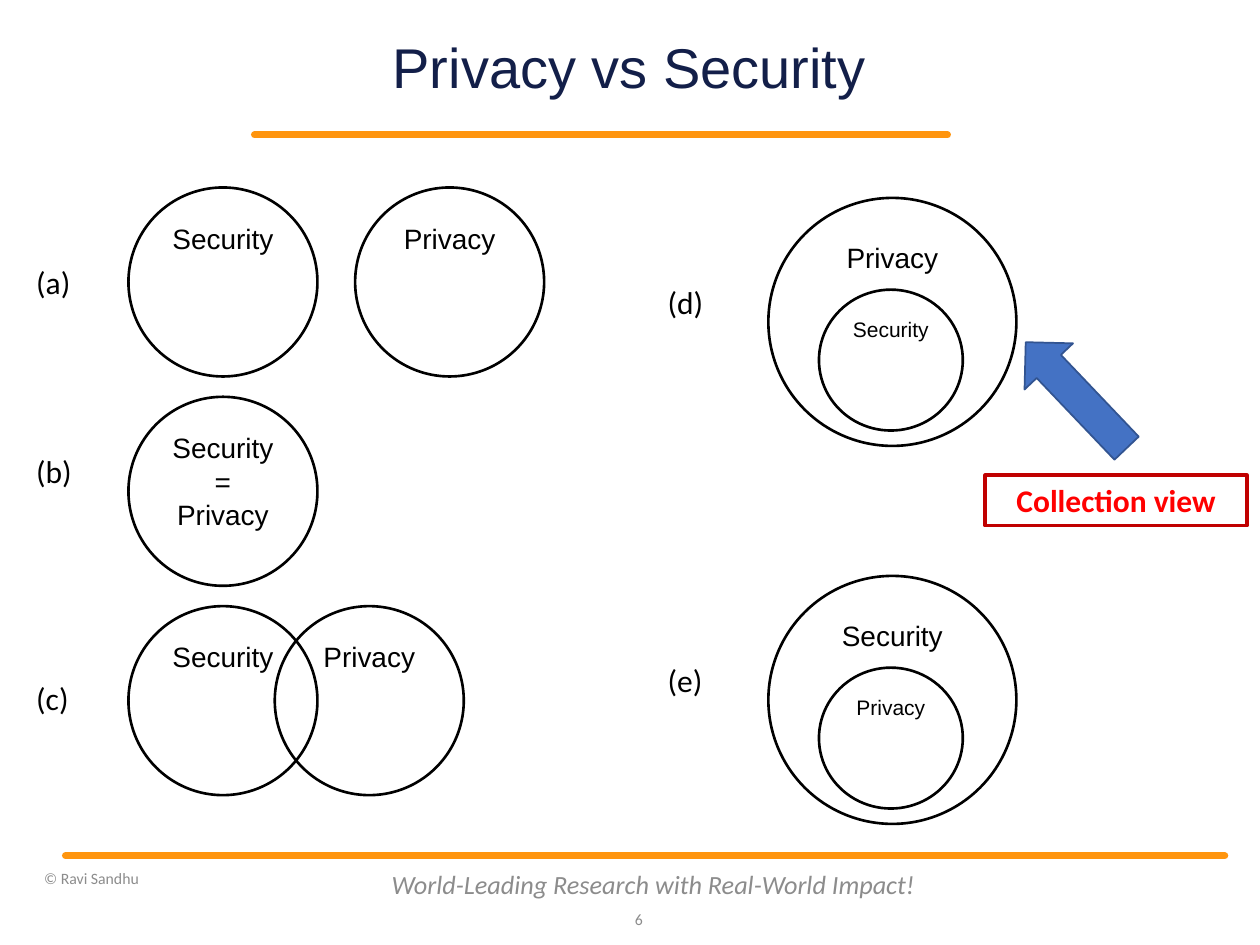
from lxml.etree import SubElement
from pptx import Presentation
from pptx.dml.color import RGBColor
from pptx.enum.shapes import MSO_CONNECTOR, MSO_SHAPE
from pptx.enum.text import MSO_ANCHOR, PP_ALIGN
from pptx.oxml.ns import qn
from pptx.util import Cm, Pt

COLORS = {
    "rule": "FF950E",
    "title": "131F49",
    "footer": "8C8C8C",
    "ink": "000000",
    "callout": "FF0000",
    "callout_border": "C00000",
    "arrow": "4472C4",
    "arrow_border": "325491",
}


def color(name):
    return RGBColor.from_string(COLORS[name])


def write(shape, text, size, font_name, ink, align=PP_ALIGN.CENTER,
          anchor=MSO_ANCHOR.TOP, bold=False, italic=False):
    """Fill a shape with text in a single style."""
    frame = shape.text_frame
    frame.text = text
    frame.vertical_anchor = anchor
    for para in frame.paragraphs:
        para.alignment = align
        for span in para.runs:
            font = span.font
            font.size = Pt(size)
            font.name = font_name
            font.bold = bold
            font.italic = italic
            font.color.rgb = color(ink)


def add_text(page, left, top, width, height, text, size, font_name, ink, wrap=True, **style):
    box = page.shapes.add_textbox(Cm(left), Cm(top), Cm(width), Cm(height))
    box.text_frame.word_wrap = wrap
    write(box, text, size, font_name, ink, **style)
    return box


def add_outline(page, preset, left, top, width, height, border, weight):
    """Add an unfilled, shadowless preset shape."""
    shape = page.shapes.add_shape(preset, Cm(left), Cm(top), Cm(width), Cm(height))
    shape.shadow.inherit = False
    shape.fill.background()
    shape.line.color.rgb = color(border)
    shape.line.width = Pt(weight)
    return shape


def add_circle(page, left, top, width, height, text, size):
    circle = add_outline(page, MSO_SHAPE.OVAL, left, top, width, height, "ink", 1.5)
    circle.text_frame.margin_left = circle.text_frame.margin_right = Cm(0.2)
    circle.text_frame.word_wrap = True
    write(circle, text, size, "Arial", "ink")


def add_nested_circles(page, top, outer, inner):
    left = 15.49
    add_circle(page, left + 1.02, top + 1.85, 2.9, 2.84, inner, 12)
    add_circle(page, left, top, 5, 5, outer, 16)


def add_case_label(page, left, top, text):
    add_text(page, left, top, 1.24, 1.02, text, 18, "Calibri", "ink",
             wrap=False, align=PP_ALIGN.LEFT)


def add_rule(page, start, end, top):
    rule = page.shapes.add_connector(MSO_CONNECTOR.STRAIGHT, Cm(start), Cm(top), Cm(end), Cm(top))
    rule.line.color.rgb = color("rule")
    rule.line.width = Pt(4)
    rule.line._get_or_add_ln().set("cap", "rnd")
    SubElement(rule._element.spPr, qn("a:effectLst"))


def add_frame(page):
    """Add the title, the two rules and the footer."""
    add_rule(page, 5.13, 19.1, 2.72)
    add_rule(page, 1.32, 24.69, 17.25)
    middle = MSO_ANCHOR.MIDDLE
    add_text(page, 7.62, 17.32, 11.1, 1.02, "World-Leading Research with Real-World Impact!",
             15, "Calibri", "footer", wrap=False, anchor=middle, italic=True)
    add_text(page, 12.19, 18.03, 1.02, 1.02, "6", 9, "Calibri", "footer",
             align=PP_ALIGN.RIGHT, anchor=middle)
    add_text(page, 0.64, 17.25, 6.99, 0.91, "© Ravi Sandhu", 9, "Calibri", "footer",
             align=PP_ALIGN.LEFT, anchor=middle)
    title = add_text(page, 6.02, 0.76, 13.34, 1.3, "Privacy vs Security", 32, "Arial",
                     "title", anchor=middle)
    frame = title.text_frame
    frame.margin_left = frame.margin_right = frame.margin_top = frame.margin_bottom = 0
    frame.paragraphs[0].line_spacing = 0.9


def add_callout(page):
    box = add_outline(page, MSO_SHAPE.RECTANGLE, 19.86, 9.58, 5.28, 1.02, "callout_border", 2)
    write(box, "Collection view", 18, "Calibri", "callout", bold=True)
    arrow = add_outline(page, MSO_SHAPE.RIGHT_ARROW, 20.22, 7.29, 2.95, 1.35, "arrow_border", 1)
    arrow.fill.solid()
    arrow.fill.fore_color.rgb = color("arrow")
    arrow.rotation = 226.4


def main():
    deck = Presentation()
    deck.slide_width, deck.slide_height = Cm(25.4), Cm(19.05)
    page = deck.slides.add_slide(deck.slide_layouts[6])
    add_frame(page)

    add_nested_circles(page, 3.99, "Privacy", "Security")
    add_nested_circles(page, 11.61, "Security", "Privacy")

    diameter, first_left, first_top, row_step = 3.81, 2.59, 3.78, 4.22
    rows = [
        [(first_left, "Security"), (7.16, "Privacy")],
        [(first_left, "Security =\nPrivacy")],
        [(first_left, "Security"), (5.54, "Privacy")],
    ]
    for row, circles in enumerate(rows):
        for left, text in circles:
            add_circle(page, left, first_top + row * row_step, diameter, diameter, text, 16)

    for left, top, text in [(0.48, 5.18, "(a)"), (0.48, 8.99, "(b)"), (0.48, 13.56, "(c)"),
                            (13.21, 5.59, "(d)"), (13.21, 13.21, "(e)")]:
        add_case_label(page, left, top, text)

    add_callout(page)
    deck.save("out.pptx")


if __name__ == "__main__":
    main()
